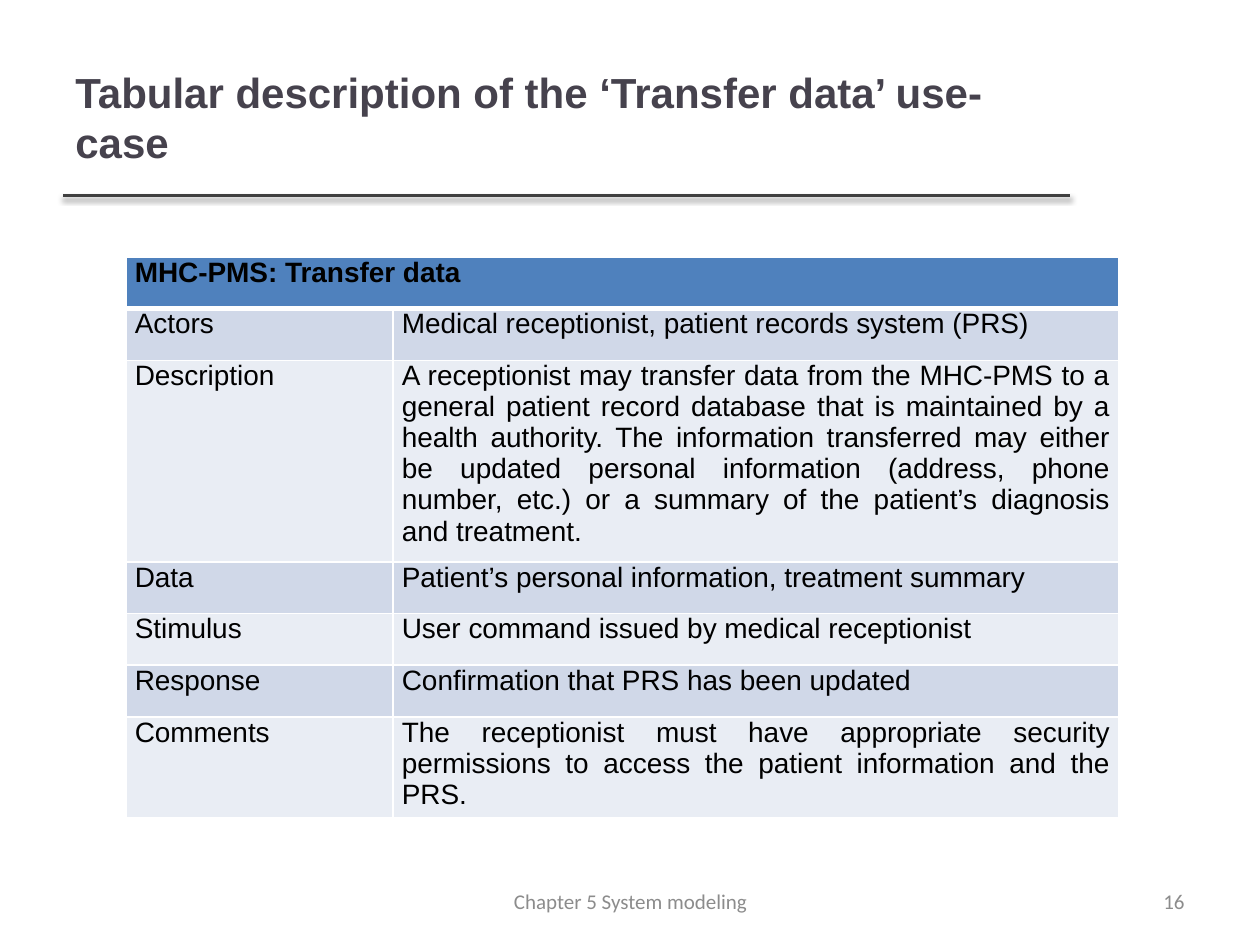
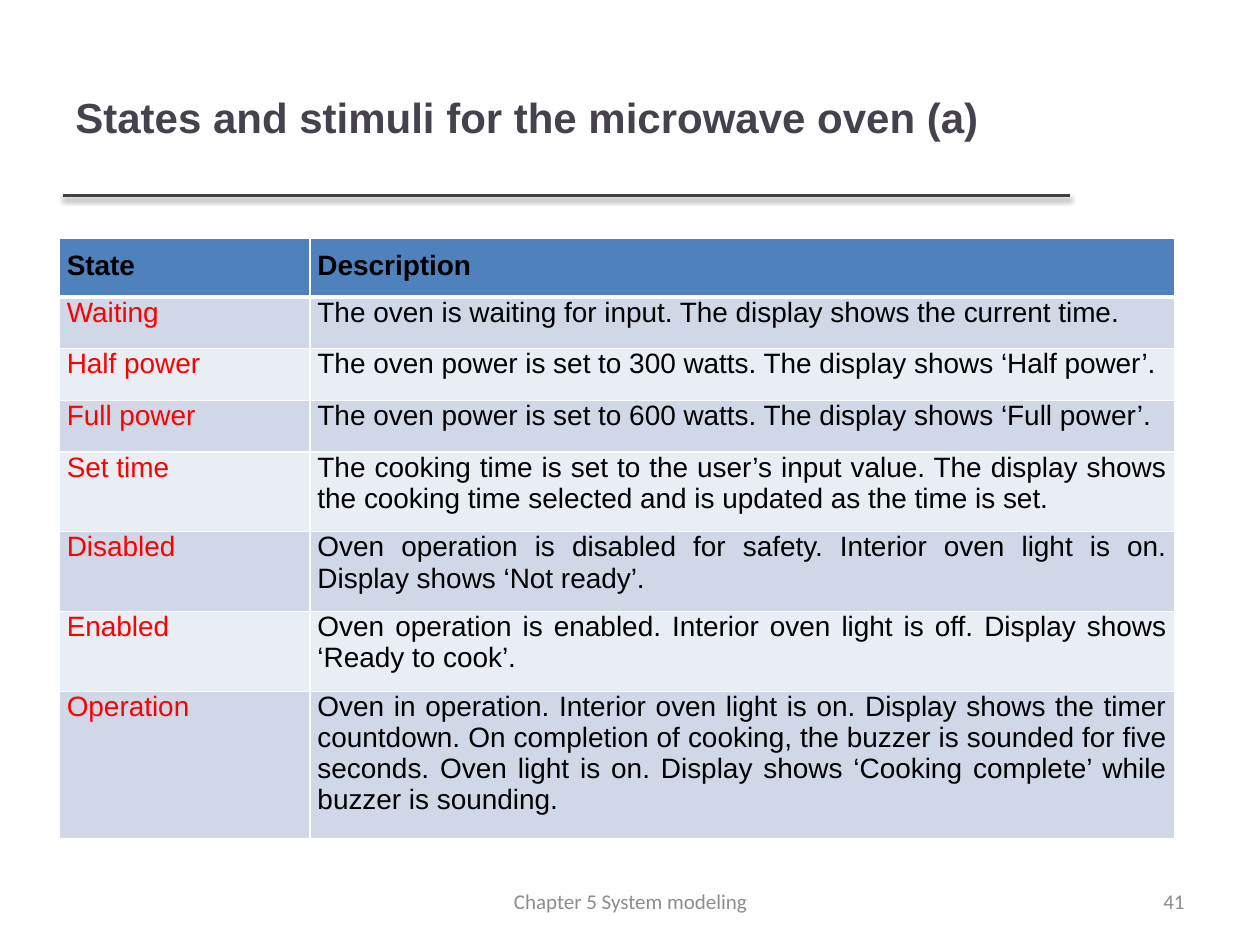
from lxml import etree
from pptx import Presentation
from pptx.dml.color import RGBColor
from pptx.enum import shapes, text
from pptx.oxml.ns import qn
from pptx.util import Inches, Pt

# Content
FOOTER = "Chapter 5 System modeling"
SLIDES = [
    dict(
        title="Tabular description of the ‘Transfer data’ use-case",
        number="16",
        header=["MHC-PMS: Transfer data"],
        rows=[
            ("Actors", "Medical receptionist, patient records system (PRS)"),
            ("Description",
             "A receptionist may transfer data from the MHC-PMS to a general patient record "
             "database that is maintained by a health authority. The information transferred "
             "may either be updated personal information (address, phone number, etc.) or a "
             "summary of the patient’s diagnosis and treatment."),
            ("Data", "Patient’s personal information, treatment summary"),
            ("Stimulus", "User command issued by medical receptionist"),
            ("Response", "Confirmation that PRS has been updated"),
            ("Comments",
             "The receptionist must have appropriate security permissions to access the "
             "patient information and the PRS."),
        ],
        corner=(1, 2.04), columns=(2.12, 5.76),
        side_inset=0.07, header_inset=(0, 0), row_inset=(0, 0),
        label_color=RGBColor(0, 0, 0),
    ),
    dict(
        title="States and stimuli for the microwave oven (a)",
        number="41",
        header=["State", "Description"],
        rows=[
            ("Waiting", "The oven is waiting for input. The display shows the current time."),
            ("Half power", "The oven power is set to 300 watts. The display shows ‘Half power’."),
            ("Full power", "The oven power is set to 600 watts. The display shows ‘Full power’."),
            ("Set time",
             "The cooking time is set to the user’s input value. The display shows the cooking "
             "time selected and is updated as the time is set."),
            ("Disabled",
             "Oven operation is disabled for safety. Interior oven light is on. Display shows "
             "‘Not ready’."),
            ("Enabled",
             "Oven operation is enabled. Interior oven light is off. Display shows "
             "‘Ready to cook’."),
            ("Operation",
             "Oven in operation. Interior oven light is on. Display shows the timer countdown. "
             "On completion of cooking, the buzzer is sounded for five seconds. Oven light is "
             "on. Display shows ‘Cooking complete’ while buzzer is sounding."),
        ],
        corner=(0.47, 1.89), columns=(1.99, 6.86),
        side_inset=0.06, header_inset=(0.1, 0.1), row_inset=(0, 0.1),
        label_color=RGBColor(0xFF, 0, 0),
    ),
]

# Shared style
BLACK = RGBColor(0, 0, 0)
RULE = RGBColor(0x40, 0x40, 0x40)
HEADER_FILL = RGBColor(0x4F, 0x81, 0xBD)
BANDS = (RGBColor(0xD0, 0xD8, 0xE8), RGBColor(0xE9, 0xED, 0xF4))
BORDER = RGBColor(0xFF, 0xFF, 0xFF)
ROW_HEIGHT = 0.41
TITLE_FONT = dict(name="Arial", size=Pt(24), bold=True)
TABLE_FONT = dict(name="Arial", size=Pt(16))
FOOTER_FONT = dict(name="Calibri", size=Pt(12))
TITLE_COLOR = RGBColor(0x46, 0x42, 0x4D)
FOOTER_COLOR = RGBColor(0x8C, 0x8C, 0x8C)


def write(frame, words, align, color, font):
    paragraph = frame.paragraphs[0]
    paragraph.alignment = align
    run = paragraph.add_run()
    run.text = words
    run.font.color.rgb = color
    for key, value in font.items():
        setattr(run.font, key, value)


def add_text(slide, place, words, align, color, font):
    frame = slide.shapes.add_textbox(*map(Inches, place)).text_frame
    frame.word_wrap = True
    frame.vertical_anchor = text.MSO_ANCHOR.MIDDLE
    write(frame, words, align, color, font)


def add_rule(slide):
    rule = slide.shapes.add_connector(
        shapes.MSO_CONNECTOR.STRAIGHT, *map(Inches, (0.5, 1.55, 8.49, 1.55)))
    rule.line.color.rgb = RULE
    rule.line.width = Pt(2)
    # Soft shadow straight below the line
    effects = etree.SubElement(rule._element.spPr, qn("a:effectLst"))
    shadow = etree.SubElement(effects, qn("a:outerShdw"), blurRad="40000",
                              dist="20000", dir="5400000", rotWithShape="0")
    black = etree.SubElement(shadow, qn("a:srgbClr"), val=str(BLACK))
    etree.SubElement(black, qn("a:alpha"), val="38000")


def set_borders(cell, top, bottom):
    properties = cell._tc.get_or_add_tcPr()
    for side, width in (("L", 1), ("R", 1), ("T", top), ("B", bottom)):
        line = etree.SubElement(properties, qn("a:ln" + side), w=str(Pt(width)))
        fill = etree.SubElement(line, qn("a:solidFill"))
        etree.SubElement(fill, qn("a:srgbClr"), val=str(BORDER))


def add_grid(slide, content):
    lines = [content["header"], *content["rows"]]
    columns = content["columns"]
    left, top = content["corner"]
    grid = slide.shapes.add_table(
        len(lines), len(columns), Inches(left), Inches(top),
        Inches(sum(columns)), Inches(ROW_HEIGHT * len(lines))).table
    grid.horz_banding = False
    for column, width in zip(grid.columns, columns):
        column.width = Inches(width)
    for r, row in enumerate(grid.rows):
        row.height = Inches(ROW_HEIGHT)
        for c, cell in enumerate(row.cells):
            above, below = content["row_inset" if r else "header_inset"]
            insets = dict(margin_left=content["side_inset"], margin_right=content["side_inset"],
                          margin_top=above, margin_bottom=below)
            for key, value in insets.items():
                setattr(cell, key, Inches(value))
            set_borders(cell, 3 if r == 1 else 1, 1 if r else 3)
            cell.fill.solid()
            cell.fill.fore_color.rgb = BANDS[(r - 1) % 2] if r else HEADER_FILL
            if c < len(lines[r]):
                color = content["label_color"] if r and c == 0 else BLACK
                write(cell.text_frame, lines[r][c], text.PP_ALIGN.JUSTIFY, color,
                      dict(TABLE_FONT, bold=r == 0))
    # A single heading spans the whole width
    if len(content["header"]) == 1:
        grid.cell(0, 0).merge(grid.cell(0, len(columns) - 1))


def main():
    deck = Presentation()
    deck.slide_width, deck.slide_height = Inches(10), Inches(7.5)
    for content in SLIDES:
        slide = deck.slides.add_slide(deck.slide_layouts[6])
        add_rule(slide)
        add_text(slide, (0.5, 0.3, 7.98, 1.25), content["title"],
                 text.PP_ALIGN.LEFT, TITLE_COLOR, TITLE_FONT)
        add_grid(slide, content)
        add_text(slide, (7.17, 6.95, 2.33, 0.4), content["number"],
                 text.PP_ALIGN.RIGHT, FOOTER_COLOR, FOOTER_FONT)
        add_text(slide, (3.42, 6.95, 3.17, 0.4), FOOTER,
                 text.PP_ALIGN.CENTER, FOOTER_COLOR, FOOTER_FONT)
    deck.save("out.pptx")


if __name__ == "__main__":
    main()
